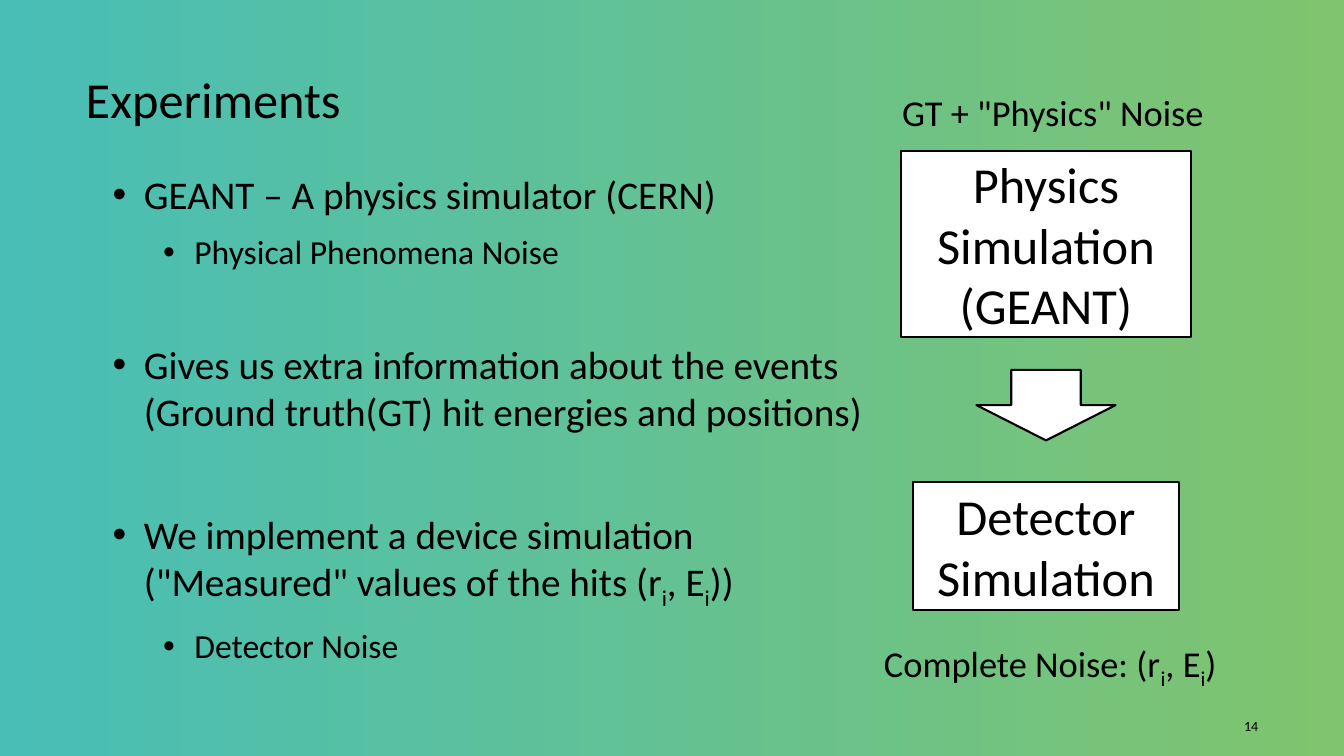
"""Build the Experiments slide: simulation notes beside a two-step flow."""
from lxml import etree
from pptx import Presentation
from pptx.dml.color import RGBColor
from pptx.enum.shapes import MSO_SHAPE
from pptx.enum.text import MSO_ANCHOR, MSO_AUTO_SIZE, PP_ALIGN
from pptx.oxml.ns import qn
from pptx.util import Inches, Pt

LEFT, CENTER, RIGHT = PP_ALIGN.LEFT, PP_ALIGN.CENTER, PP_ALIGN.RIGHT
TOP, MIDDLE = MSO_ANCHOR.TOP, MSO_ANCHOR.MIDDLE
FIXED = MSO_AUTO_SIZE.NONE
RECTANGLE, DOWN_ARROW = MSO_SHAPE.RECTANGLE, MSO_SHAPE.DOWN_ARROW

FONT, INK, PAPER = "Calibri", "000000", "FFFFFF"
FLOW_CENTER = 77.83
LEVELS = [(28, 0.31), (24, 0.81)]
HANG = 0.31

NOTES = [
    ("GEANT – A physics simulator (CERN)", 0, 10),
    ("Physical Phenomena Noise", 1, 49.3),
    ("Gives us extra information about the events "
     "(Ground truth(GT) hit energies and positions)", 0, 54.2),
    ('We implement a device simulation ("Measured" values of the hits (r_i, E_i))', 0, 10),
    ("Detector Noise", 1, 10),
]


def color(value):
    """Turn a hex string into a colour."""
    return RGBColor.from_string(value)


def write(frame, text, size=26, align=LEFT, indent=None, after=0):
    """Add a paragraph to a frame; an underscore lowers the next character."""
    paragraph = frame.paragraphs[0]
    if paragraph.runs:
        paragraph = frame.add_paragraph()
    if indent is not None:
        properties = paragraph._p.get_or_add_pPr()
        properties.set("marL", str(Inches(indent)))
        properties.set("indent", str(-Inches(HANG)))
        bullet_color = etree.SubElement(properties, qn("a:buClr"))
        etree.SubElement(bullet_color, qn("a:srgbClr"), val=INK)
        etree.SubElement(properties, qn("a:buFont"), typeface="Arial")
        etree.SubElement(properties, qn("a:buChar"), char="•")
    paragraph.alignment = align
    paragraph.space_after = Pt(after)
    opening, *lowered = text.split("_")
    pieces = [(opening, False)]
    for part in lowered:
        pieces += [(part[0], True), (part[1:], False)]
    for piece, is_subscript in pieces:
        run = paragraph.add_run()
        run.text = piece
        run.font.name, run.font.size = FONT, Pt(size)
        run.font.color.rgb = color(INK)
        if is_subscript:
            run._r.get_or_add_rPr().set("baseline", "-25000")


class Deck:
    """Hold the style and the current slide, placing parts by percent of its size."""

    def __init__(self):
        """Start a widescreen presentation with one title-only slide."""
        self.show = Presentation()
        self.show.slide_width, self.show.slide_height = Inches(13.33), Inches(7.5)
        self.slide = self.show.slides.add_slide(self.show.slide_layouts[5])

    def place(self, left, top, width, height):
        """Convert percentages of the slide into lengths."""
        across, down = self.show.slide_width / 100, self.show.slide_height / 100
        return [round(n) for n in (left * across, top * down, width * across, height * down)]

    def background(self, *stops):
        """Fill the background with a gradient from left to right."""
        fill = self.slide.background.fill
        fill.gradient()
        fill.gradient_angle = 0
        for stop, value in zip(fill.gradient_stops, stops):
            stop.color.rgb = color(value)

    def title(self, text, *box):
        """Place and format the title."""
        heading = self.slide.shapes.title
        heading.left, heading.top, heading.width, heading.height = self.place(*box)
        heading.text_frame.auto_size = FIXED
        heading.text_frame.vertical_anchor = MIDDLE
        write(heading.text_frame, text, size=36)

    def text(self, *box, anchor=TOP):
        """Add a wrapping text box and return its frame."""
        frame = self.slide.shapes.add_textbox(*self.place(*box)).text_frame
        frame.word_wrap = True
        frame.vertical_anchor = anchor
        return frame

    def step(self, kind, top, width, height, *lines):
        """Add an outlined shape centred on the flow."""
        box = self.place(FLOW_CENTER - width / 2, top, width, height)
        shape = self.slide.shapes.add_shape(kind, *box)
        shape.shadow.inherit = False
        shape.fill.solid()
        shape.fill.fore_color.rgb = color(PAPER)
        shape.line.color.rgb = color(INK)
        shape.line.width = Pt(1.5)
        shape.text_frame.vertical_anchor = MIDDLE
        for line in lines:
            write(shape.text_frame, line, size=36, align=CENTER)


def main():
    """Compose and save the slide."""
    deck = Deck()
    deck.background("48BEB7", "80C46E")
    deck.title("Experiments", 5.63, 5.73, 88.73, 14.53)
    notes = deck.text(7.65, 21.87, 57.3, 63.47)
    for note, level, after in NOTES:
        size, indent = LEVELS[level]
        write(notes, note, size=size, indent=indent, after=after)
    write(deck.text(89.85, 93.73, 4.5, 4.67, anchor=MIDDLE), "14", size=10, align=RIGHT)
    deck.step(RECTANGLE, 20, 21.6, 24.53, "Physics Simulation", "(GEANT)")
    deck.step(RECTANGLE, 63.73, 19.8, 16.93, "Detector Simulation")
    deck.step(DOWN_ARROW, 48.93, 10.35, 9.33)
    write(deck.text(66.38, 11.33, 26.78, 7.2), 'GT + "Physics" Noise')
    write(deck.text(65.03, 84.13, 28.65, 7.2), "Complete Noise: (r_i, E_i)")
    deck.show.save("out.pptx")


if __name__ == "__main__":
    main()
